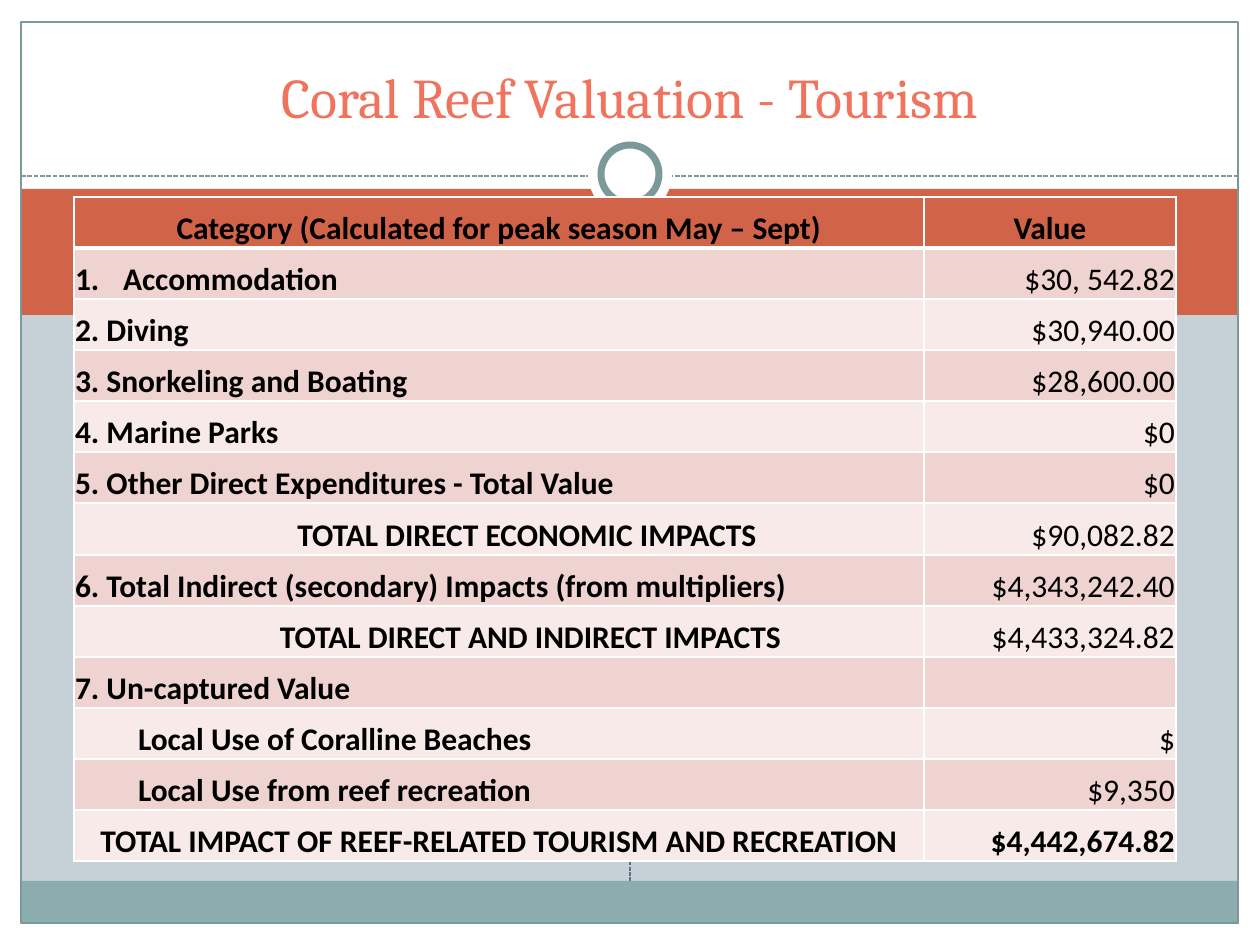
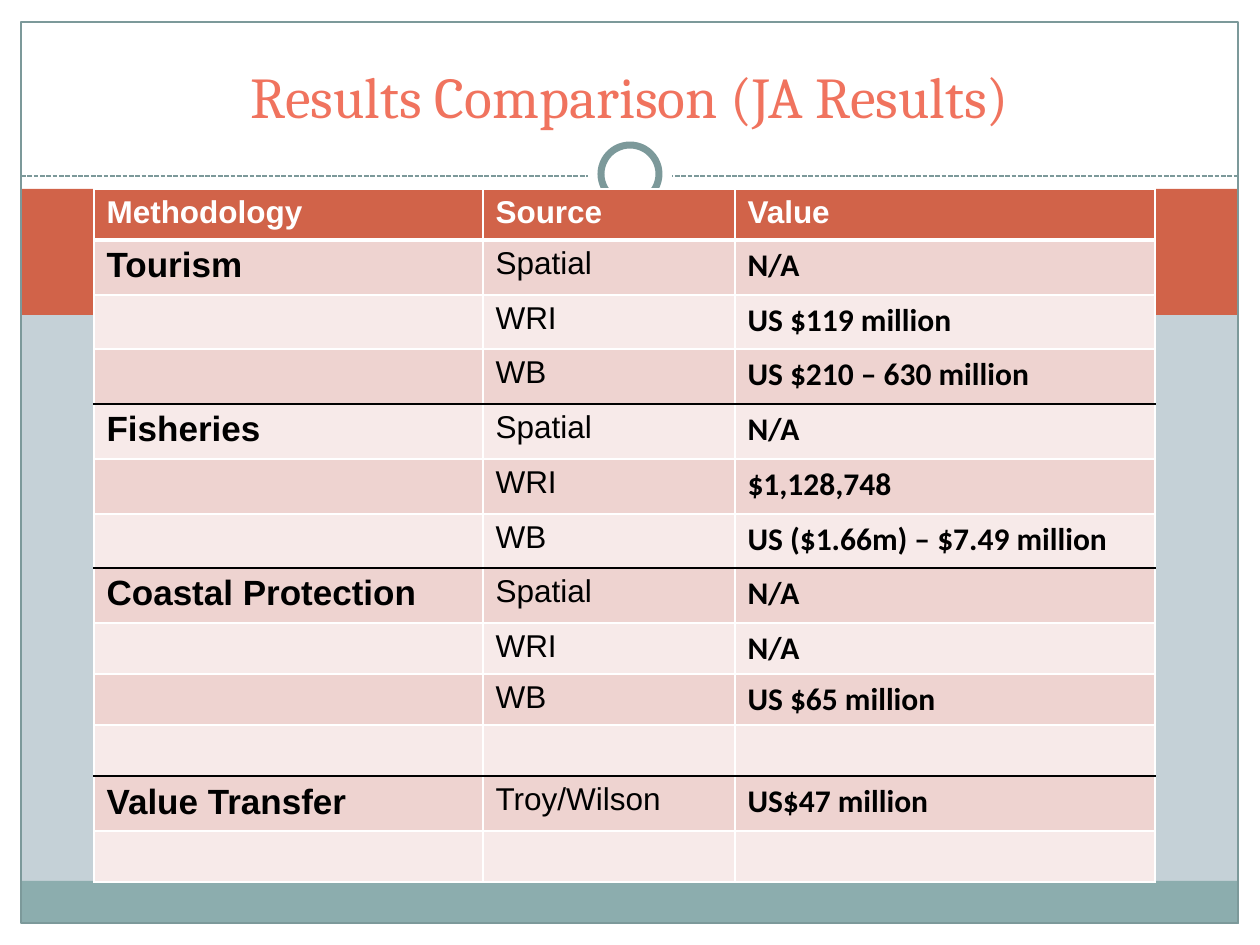
from lxml.etree import SubElement
from pptx import Presentation
from pptx.dml.color import RGBColor
from pptx.enum.dml import MSO_LINE
from pptx.enum.shapes import MSO_CONNECTOR, MSO_SHAPE
from pptx.enum.text import MSO_ANCHOR, PP_ALIGN
from pptx.oxml.ns import qn
from pptx.util import Inches, Pt

PX = Inches(1) // 126
COLORS = {
    "background": "C5D1D7",
    "white": "FFFFFF",
    "black": "000000",
    "coral": "D16349",
    "title": "F0735E",
    "teal": "8CADAE",
    "outline": "7C999A",
    "divider": "646B86",
    "odd row": "EED3D0",
    "even row": "F7EAE9",
}
RGB = {name: RGBColor.from_string(value) for name, value in COLORS.items()}


def write(text_frame, text, font="Calibri", size=18, bold=False, color="black",
          align=PP_ALIGN.LEFT, indent=0, numbered=False):
    """Put one formatted paragraph in the frame; a numbered one hangs by its indent."""
    paragraph = text_frame.paragraphs[0]
    paragraph.alignment = align
    properties = paragraph._p.get_or_add_pPr()
    if indent:
        properties.set("marL", str(indent * PX))
        properties.set("indent", str(-indent * PX if numbered else 0))
    if numbered:
        SubElement(properties, qn("a:buFont"), typeface="+mj-lt")
        SubElement(properties, qn("a:buAutoNum"), type="arabicPeriod")
    run = paragraph.add_run()
    run.text = text
    run.font.name = font
    run.font.size = Pt(size)
    run.font.bold = bold
    run.font.color.rgb = RGB[color]


def add_banded_table(slide, left, top, column_widths, row_heights, ruled_rows=()):
    """Add a table with a coral header, banded rows and a black rule under ruled_rows."""
    table = slide.shapes.add_table(
        len(row_heights), len(column_widths), left * PX, top * PX,
        sum(column_widths) * PX, sum(row_heights) * PX).table
    for column, width in zip(table.columns, column_widths):
        column.width = width * PX
    for index, (row, height) in enumerate(zip(table.rows, row_heights)):
        row.height = height * PX
        above = "black" if index - 1 in ruled_rows else "white"
        below = "black" if index in ruled_rows else "white"
        borders = {
            "a:lnL": ("white", 1),
            "a:lnR": ("white", 1),
            "a:lnT": (above, 3 if index == 1 else 1),
            "a:lnB": (below, 3 if index == 0 else 1),
        }
        band = "coral" if index == 0 else "odd row" if index % 2 else "even row"
        for cell in row.cells:
            cell_properties = cell._tc.get_or_add_tcPr()
            for tag, (color, width) in borders.items():
                border = SubElement(cell_properties, qn(tag), w=str(Pt(width)))
                fill = SubElement(border, qn("a:solidFill"))
                SubElement(fill, qn("a:srgbClr"), val=COLORS[color])
            cell.fill.solid()
            cell.fill.fore_color.rgb = RGB[band]
    return table


presentation = Presentation()
presentation.slide_width = 1260 * PX
presentation.slide_height = 945 * PX
layout = presentation.slide_layouts[5]
tourism_slide = presentation.slides.add_slide(layout)
comparison_slide = presentation.slides.add_slide(layout)

# Shared look: background, bands, frame, ring and title
decorations = [
    # kind, left, top, width, height, fill, line, line width
    ("line", 630, 881, 0, -577, None, "divider", 0.75),
    ("rectangle", 0, 0, 1260, 199, "white", None, 0),
    ("rectangle", 0, 924, 1260, 21, "white", None, 0),
    ("rectangle", 0, 0, 21, 945, "white", None, 0),
    ("rectangle", 1239, 0, 21, 945, "white", None, 0),
    ("rectangle", 21, 189, 1218, 126, "coral", None, 0),
    ("rectangle", 21, 881, 1218, 43, "teal", None, 0),
    ("line", 21, 176, 1218, 0, None, "outline", 0.9),
    ("rectangle", 21, 22, 1217, 901, None, "outline", 0.75),
    ("ellipse", 588, 132, 84, 84, "white", None, 0),
    ("ellipse", 601, 145, 58, 58, "white", "outline", 4),
]
presets = {"rectangle": MSO_SHAPE.RECTANGLE, "ellipse": MSO_SHAPE.OVAL}
titles = [
    (tourism_slide, "Coral Reef Valuation - Tourism", 32),
    (comparison_slide, "Results Comparison (JA Results)", 33),
]
for slide, title_text, title_size in titles:
    slide.background.fill.solid()
    slide.background.fill.fore_color.rgb = RGB["background"]
    for kind, left, top, width, height, fill, line, line_width in decorations:
        if kind == "line":
            shape = slide.shapes.add_connector(
                MSO_CONNECTOR.STRAIGHT, left * PX, top * PX,
                (left + width) * PX, (top + height) * PX)
            shape.line.dash_style = MSO_LINE.SQUARE_DOT
            SubElement(shape._element.spPr, qn("a:effectLst"))
        else:
            shape = slide.shapes.add_shape(
                presets[kind], left * PX, top * PX, width * PX, height * PX)
            shape.shadow.inherit = False
            if fill:
                shape.fill.solid()
                shape.fill.fore_color.rgb = RGB[fill]
            else:
                shape.fill.background()
        if line:
            shape.line.color.rgb = RGB[line]
            shape.line.width = Pt(line_width)
        else:
            shape.line.fill.background()
        if line == "divider":
            center_divider = shape
        if fill == "teal":
            center_divider.begin_connect(shape, 0)

    title = slide.shapes.title
    slide.shapes._spTree.append(title._element)
    title.left, title.top = 42 * PX, 32 * PX
    title.width, title.height = 1176 * PX, 104 * PX
    title.text_frame.vertical_anchor = MSO_ANCHOR.BOTTOM
    write(title.text_frame, title_text, font="Cambria", size=title_size,
          color="title", align=PP_ALIGN.CENTER)

# Slide 1: tourism values
centered = {"align": PP_ALIGN.CENTER}
subtotal = {"align": PP_ALIGN.CENTER, "indent": 63}
sub_item = {"indent": 63}
tourism_rows = [
    ("Category (Calculated for peak season May – Sept)", "Value", centered),
    ("Accommodation", "$30, 542.82", {"indent": 48, "numbered": True}),
    ("2. Diving", "$30,940.00", {}),
    ("3. Snorkeling and Boating", "$28,600.00", {}),
    ("4. Marine Parks", "$0", {}),
    ("5. Other Direct Expenditures - Total Value", "$0", {}),
    ("TOTAL DIRECT ECONOMIC IMPACTS ", "$90,082.82", subtotal),
    ("6. Total Indirect (secondary) Impacts (from multipliers)", "$4,343,242.40", {}),
    ("TOTAL DIRECT AND INDIRECT IMPACTS", "$4,433,324.82", subtotal),
    ("7. Un-captured Value", "", {}),
    ("Local Use of Coralline Beaches", "$", sub_item),
    ("Local Use from reef recreation", "$9,350", sub_item),
    ("TOTAL IMPACT OF REEF-RELATED TOURISM AND RECREATION", "$4,442,674.82", centered),
]
tourism_table = add_banded_table(
    tourism_slide, 74, 197, [850, 252], [51] * 6 + [52] + [51] * 6)
for index, (category, value, category_format) in enumerate(tourism_rows):
    category_cell, value_cell = tourism_table.rows[index].cells
    for cell in (category_cell, value_cell):
        cell.vertical_anchor = MSO_ANCHOR.BOTTOM
        cell.margin_left = cell.margin_right = cell.margin_top = PX
        cell.margin_bottom = 0
    write(category_cell.text_frame, category, bold=True, **category_format)
    if value:
        write(value_cell.text_frame, value,
              bold=index in (0, len(tourism_rows) - 1),
              align=PP_ALIGN.RIGHT if index else PP_ALIGN.CENTER)

# Slide 2: results by methodology and source
comparison_rows = [
    ("Methodology", "Source", "Value"),
    ("Tourism", "Spatial", "N/A"),
    ("", "WRI", "US $119 million"),
    ("", "WB", "US $210 – 630 million"),
    ("Fisheries", "Spatial", "N/A"),
    ("", "WRI", "$1,128,748"),
    ("", "WB", "US ($1.66m) – $7.49 million"),
    ("Coastal Protection", "Spatial", "N/A"),
    ("", "WRI", "N/A"),
    ("", "WB", "US $65 million"),
    ("", "", ""),
    ("Value Transfer", "Troy/Wilson", "US$47 million"),
    ("", "", ""),
]
header_format = {"font": "Arial", "bold": True, "color": "white"}
column_formats = [
    {"font": "Arial", "size": 20, "bold": True},
    {"font": "Arial"},
    {"bold": True},
]
comparison_table = add_banded_table(
    comparison_slide, 94, 189, [389, 252, 420],
    [51, 55, 54, 55, 55, 55, 54, 55, 51, 51, 51, 55, 51], ruled_rows=(3, 6, 10))
for index, texts in enumerate(comparison_rows):
    cells = comparison_table.rows[index].cells
    for cell, text, column_format in zip(cells, texts, column_formats):
        if text:
            write(cell.text_frame, text, **(column_format if index else header_format))

presentation.save("out.pptx")
